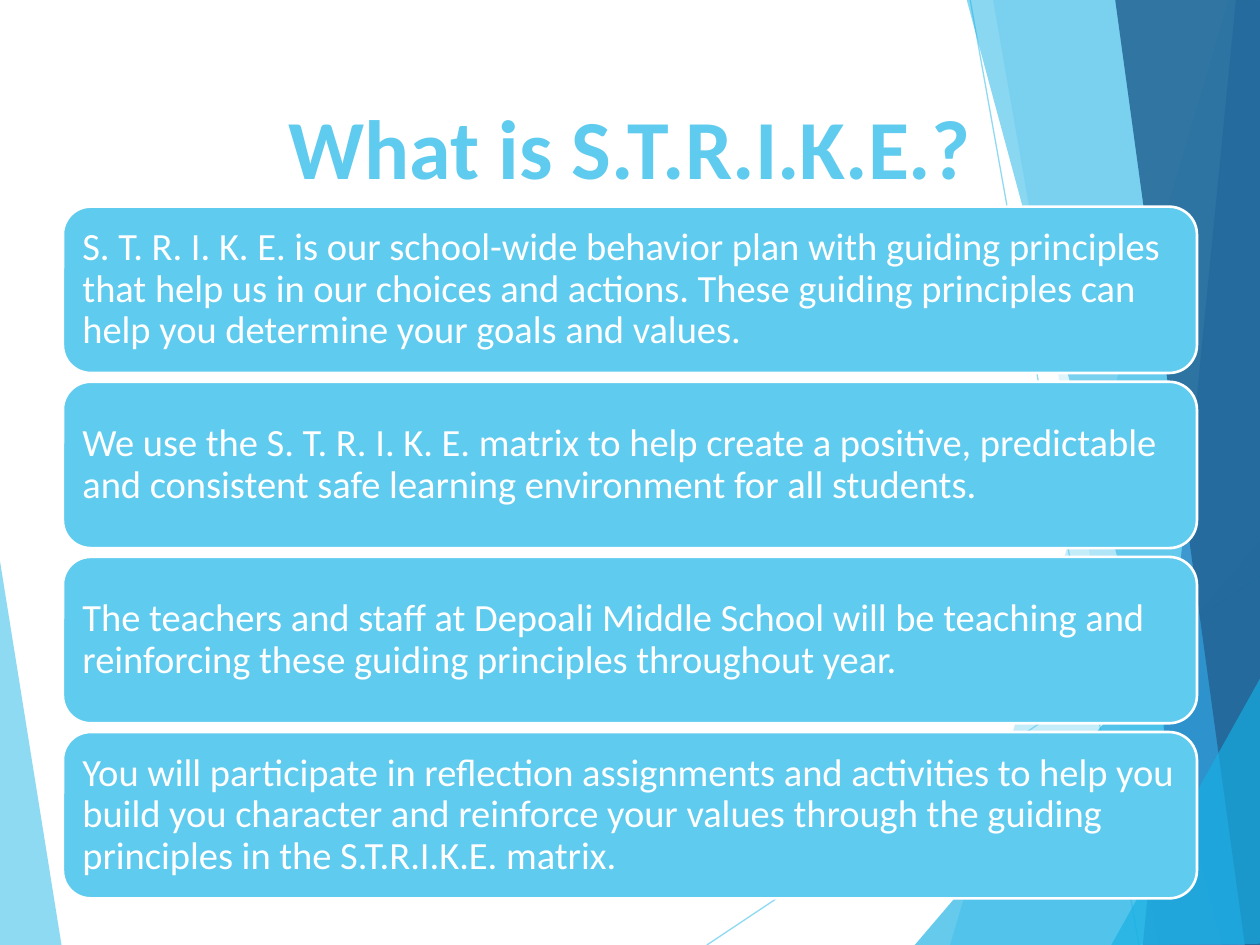
from dataclasses import dataclass

from lxml import etree
from pptx import Presentation
from pptx.dml.color import RGBColor
from pptx.enum import shapes, text
from pptx.oxml import ns
from pptx.util import Pt

PX = 9144  # EMU per px, 100 px to the inch
WIDTH, HEIGHT = 1000, 750
FONT = "Calibri"

WHITE = RGBColor(0xFF, 0xFF, 0xFF)
SKY = RGBColor(0x5F, 0xCB, 0xEF)
CYAN = RGBColor(0x17, 0xB0, 0xE4)
BLUE = RGBColor(0x2E, 0x83, 0xC3)
NAVY = RGBColor(0x22, 0x62, 0x92)


@dataclass(frozen=True)
class Facet:
    points: tuple[tuple[int, int], ...]
    color: RGBColor
    opacity: int


@dataclass(frozen=True)
class Ray:
    start: tuple[int, int]
    end: tuple[int, int]


LEFT_FACET = Facet(((-1, 439), (49, 751), (-1, 750)), SKY, 70)
RAYS = (Ray((561, 750), (1001, 457)), Ray((770, 0), (904, 750)))
RIGHT_FACETS = (
    Facet(((975, 0), (754, 750), (1002, 751), (1001, 1)), SKY, 36),
    Facet(((788, -1), (919, 750), (1001, 750), (1001, -1)), SKY, 20),
    Facet(((726, 750), (1000, 429), (1001, 750)), CYAN, 66),
    Facet(((767, -1), (970, 750), (1001, 749), (1001, -1)), CYAN, 50),
    Facet(((981, -1), (907, 750), (1001, 750), (1000, -1)), BLUE, 70),
    Facet(((885, -1), (988, 750), (1002, 750), (1000, -1)), NAVY, 82),
    Facet(((882, 750), (1002, 535), (1002, 749)), CYAN, 66),
)

CARD_LEFT, CARD_TOP, CARD_WIDTH, CARD_HEIGHT, CARD_STEP = 50, 164, 900, 132, 139
CARDS = (
    "S. T. R. I. K. E. is our school-wide behavior plan with guiding principles "
    "that help us in our choices and actions. These guiding principles can help "
    "you determine your goals and values.",
    "We use the S. T. R. I. K. E. matrix to help create a positive, predictable "
    "and consistent safe learning environment for all students.",
    "The teachers and staff at Depoali Middle School will be teaching and "
    "reinforcing these guiding principles throughout year.",
    "You will participate in reflection assignments and activities to help you "
    "build you character and reinforce your values through the guiding "
    "principles in the S.T.R.I.K.E. matrix.",
)


def set_opacity(shape, percent: int) -> None:
    """Make the colour of a shape's fill or line partly transparent."""
    color = next(shape._element.spPr.iter(ns.qn("a:srgbClr")))
    etree.SubElement(color, ns.qn("a:alpha"), val=str(percent * 1000))


def draw_facet(page, facet: Facet) -> None:
    first, *rest = facet.points
    builder = page.shapes.build_freeform(*first, scale=PX)
    builder.add_line_segments(rest, close=True)
    shape = builder.convert_to_shape()
    shape.shadow.inherit = False
    shape.fill.solid()
    shape.fill.fore_color.rgb = facet.color
    shape.line.fill.background()
    set_opacity(shape, facet.opacity)


def draw_ray(page, ray: Ray) -> None:
    ends = [value * PX for value in ray.start + ray.end]
    line = page.shapes.add_connector(shapes.MSO_CONNECTOR.STRAIGHT, *ends)
    line.line.color.rgb = SKY
    line.line.width = Pt(0.75)
    set_opacity(line, 70)
    etree.SubElement(line._element.spPr, ns.qn("a:effectLst"))


def write(box, words: str, *, size: int, color: RGBColor, bold: bool = False,
          align=text.PP_ALIGN.LEFT, anchor=text.MSO_ANCHOR.MIDDLE,
          margins: tuple[int, int] = (9, 9), spacing: float = 1.0) -> None:
    frame = box.text_frame
    frame.word_wrap = True
    frame.vertical_anchor = anchor
    frame.margin_left = frame.margin_right = margins[0] * PX
    frame.margin_top = frame.margin_bottom = margins[1] * PX
    para = frame.paragraphs[0]
    para.alignment = align
    para.line_spacing = spacing
    span = para.add_run()
    span.text = words
    span.font.name = FONT
    span.font.size = Pt(size)
    span.font.bold = bold
    span.font.color.rgb = color


def draw_card(page, row: int, words: str) -> None:
    top = CARD_TOP + row * CARD_STEP
    card = page.shapes.add_shape(
        shapes.MSO_SHAPE.ROUNDED_RECTANGLE,
        CARD_LEFT * PX, top * PX, CARD_WIDTH * PX, CARD_HEIGHT * PX)
    card.shadow.inherit = False
    card.fill.solid()
    card.fill.fore_color.rgb = SKY
    card.line.color.rgb = WHITE
    card.line.width = Pt(1.5)
    write(card, words, size=22, color=WHITE, spacing=0.9)


def main() -> None:
    deck = Presentation()
    deck.slide_width, deck.slide_height = WIDTH * PX, HEIGHT * PX
    page = deck.slides.add_slide(deck.slide_layouts[6])

    # Faceted backdrop
    draw_facet(page, LEFT_FACET)
    for ray in RAYS:
        draw_ray(page, ray)
    for facet in RIGHT_FACETS:
        draw_facet(page, facet)

    # Title
    title = page.shapes.add_textbox(50 * PX, 67 * PX, 900 * PX, 94 * PX)
    write(title, "What is S.T.R.I.K.E.?", size=48, color=SKY, bold=True,
          align=text.PP_ALIGN.CENTER, anchor=text.MSO_ANCHOR.BOTTOM,
          margins=(10, 5))

    # Stacked cards
    for row, words in enumerate(CARDS):
        draw_card(page, row, words)

    deck.save("out.pptx")


if __name__ == "__main__":
    main()
